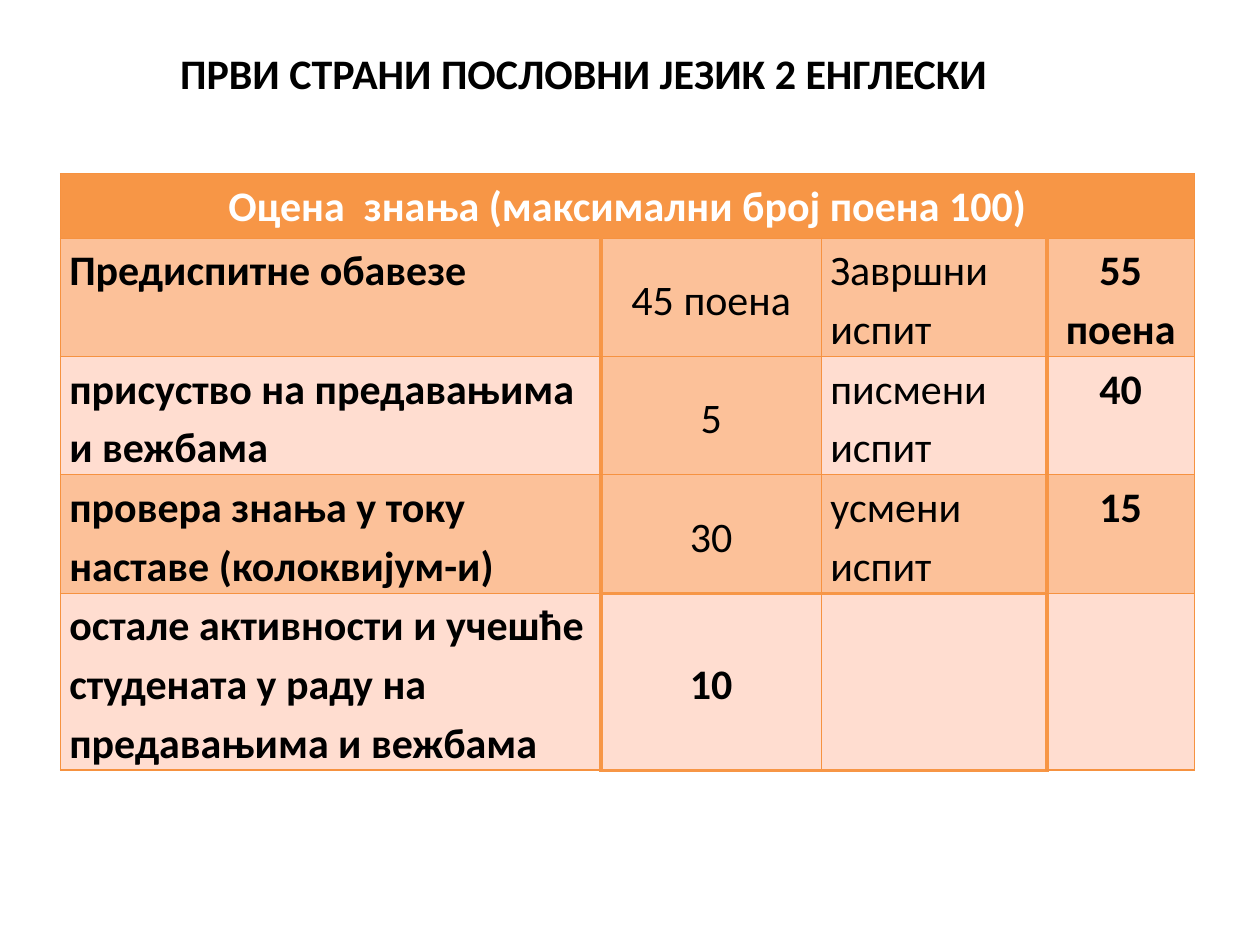
from dataclasses import dataclass

from lxml.etree import SubElement
from pptx import Presentation
from pptx.dml.color import RGBColor
from pptx.enum.text import MSO_ANCHOR as ANCHOR, PP_ALIGN as ALIGN
from pptx.oxml.ns import qn
from pptx.util import Inches, Pt


@dataclass(frozen=True)
class Theme:
    """Colours, font and sizes of the slide."""
    font: str = "Calibri"
    size: int = 24
    text: str = "000000"
    header_text: str = "FFFFFF"
    header: str = "F79646"
    dark_band: str = "FCC199"
    light_band: str = "FFDDD0"
    grid: str = "F69240"
    thin: float = 0.75
    thick: float = 2


THEME = Theme()
TITLE = "ПРВИ СТРАНИ ПОСЛОВНИ ЈЕЗИК 2 ЕНГЛЕСКИ"
HEADER = "Оцена  знања (максимални број поена 100)"
ROWS = [
    ("Предиспитне обавезе", "45 поена", "Завршни испит", "55 поена"),
    ("присуство на предавањима и вежбама", "5", "писмени испит", "40"),
    ("провера знања у току наставе (колоквијум-и)", "30", "усмени испит", "15"),
    ("остале активности и учешће студената у раду на предавањима и вежбама",
     "10", "", ""),
]
COL_WIDTHS = (4.29, 1.75, 1.79, 1.17)
ROW_HEIGHTS = (0.51, 0.94, 0.94, 0.94, 1.4)
LAST_ROW = len(ROWS)


def format_text(tf, bold, color, align):
    """Format every paragraph and run of a text frame."""
    for p in tf.paragraphs:
        p.alignment = align
        for r in p.runs:
            r.font.name, r.font.size, r.font.bold = THEME.font, Pt(THEME.size), bold
            r.font.color.rgb = RGBColor.from_string(color)


def add_title(s):
    """Place the slide title."""
    sp = s.shapes.title
    sp.left, sp.top, sp.width, sp.height = map(Inches, (1.33, 0.33, 7.58, 0.5))
    tf = sp.text_frame
    tf.text, tf.vertical_anchor = TITLE, ANCHOR.TOP
    format_text(tf, True, THEME.text, ALIGN.LEFT)


def set_borders(cell, thick_sides):
    """Draw all four cell borders, heavier on the given sides."""
    tc_pr = cell._tc.get_or_add_tcPr()
    for side in "LRTB":
        thick = side in thick_sides
        width = THEME.thick if thick else THEME.thin
        ln = SubElement(tc_pr, qn(f"a:ln{side}"), w=str(Pt(width)))
        fill = SubElement(ln, qn("a:solidFill"))
        SubElement(fill, qn("a:srgbClr"), val=THEME.header if thick else THEME.grid)


def heavy_sides(row, col):
    """Return the sides of a body cell that carry a heavy border."""
    sides = ("R", "L", "R", "L")[col]
    if col in (1, 2):
        if row == LAST_ROW:
            sides += "TB"
        elif row == LAST_ROW - 1:
            sides += "B"
    return sides


def fill_cell(cell, text, fill, bold, align, anchor=ANCHOR.TOP,
              color=THEME.text, thick_sides=""):
    """Write and style one table cell."""
    set_borders(cell, thick_sides)
    cell.fill.solid()
    cell.fill.fore_color.rgb = RGBColor.from_string(fill)
    cell.margin_left = cell.margin_right = Inches(0.07)
    cell.margin_top = cell.margin_bottom = 0
    cell.vertical_anchor = anchor
    cell.text_frame.text = text
    cell.text_frame.paragraphs[0].line_spacing = 1.15
    format_text(cell.text_frame, bold, color, align)


def add_grading_table(s):
    """Add the table of points."""
    table = s.shapes.add_table(
        len(ROW_HEIGHTS), len(COL_WIDTHS), Inches(0.48), Inches(1.38),
        Inches(sum(COL_WIDTHS)), Inches(sum(ROW_HEIGHTS))).table
    for column, width in zip(table.columns, COL_WIDTHS):
        column.width = Inches(width)
    for row, height in zip(table.rows, ROW_HEIGHTS):
        row.height = Inches(height)

    table.cell(0, 0).merge(table.cell(0, len(COL_WIDTHS) - 1))
    fill_cell(table.cell(0, 0), HEADER, THEME.header, True, ALIGN.CENTER,
              color=THEME.header_text)
    for i, texts in enumerate(ROWS, start=1):
        for j, text in enumerate(texts):
            dark = i % 2 == 1 or (i, j) == (2, 1)
            bold = j in (0, 3) or i == LAST_ROW
            middle = j == 1 or (i, j) == (1, 3)
            fill_cell(table.cell(i, j), text,
                      THEME.dark_band if dark else THEME.light_band, bold,
                      ALIGN.CENTER if j in (1, 3) else ALIGN.LEFT,
                      ANCHOR.MIDDLE if middle else ANCHOR.TOP,
                      thick_sides=heavy_sides(i, j))


def main():
    """Build and save the slide."""
    prs = Presentation()
    prs.slide_width, prs.slide_height = Inches(10), Inches(7.5)
    s = prs.slides.add_slide(prs.slide_layouts[5])
    add_title(s)
    add_grading_table(s)
    prs.save("out.pptx")


if __name__ == "__main__":
    main()
